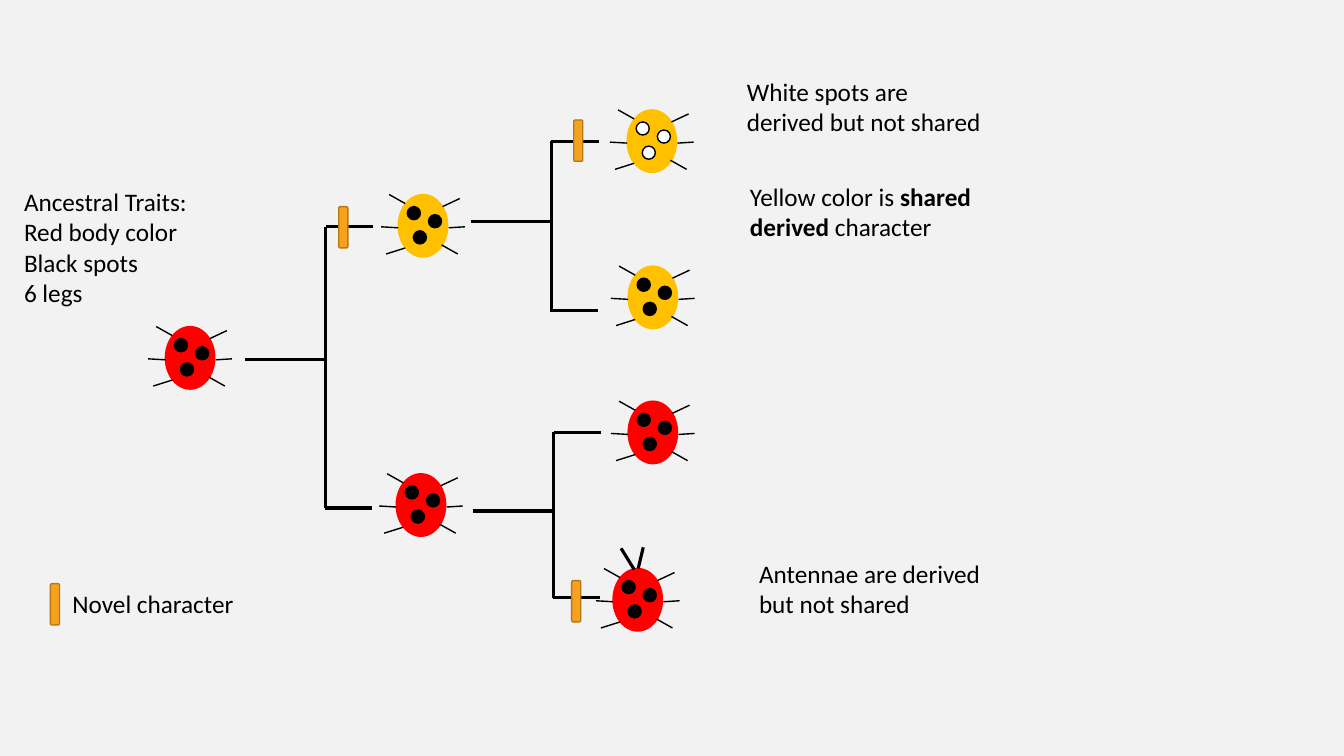
from typing import NamedTuple

from lxml import etree
from pptx import Presentation
from pptx.dml.color import RGBColor
from pptx.enum.shapes import MSO_CONNECTOR, MSO_SHAPE
from pptx.enum.text import MSO_AUTO_SIZE
from pptx.oxml.ns import qn
from pptx.shapes.autoshape import Shape
from pptx.shapes.shapetree import GroupShapes, SlideShapes
from pptx.util import Inches, Pt

OVAL = MSO_SHAPE.OVAL
ROUNDED = MSO_SHAPE.ROUNDED_RECTANGLE
STRAIGHT = MSO_CONNECTOR.STRAIGHT
GROW = MSO_AUTO_SIZE.SHAPE_TO_FIT_TEXT

COLORS = {
    "background": "F2F2F2",
    "black": "000000",
    "white": "FFFFFF",
    "red": "FF0000",
    "yellow": "FFC000",
    "marker": "F6A21D",
    "marker_edge": "B67815",
}
FONT = {"name": "Calibri", "size": Pt(18)}
FRAME = {"word_wrap": True, "auto_size": GROW}
THIN, THICK = 1, 2.25

Point = tuple[float, float]
Canvas = SlideShapes | GroupShapes


class Segment(NamedTuple):
    start: Point
    end: Point


class Beetle(NamedTuple):
    left: float
    top: float
    body: str
    spots: str = "black"


class Fork(NamedTuple):
    """A stem from the left that splits into an upper and a lower arm."""
    stem_left: float
    stem_y: float
    split_x: float
    upper_y: float
    lower_y: float


class Span(NamedTuple):
    text: str
    bold: bool = False


class Note(NamedTuple):
    left: float
    top: float
    width: float
    height: float
    paras: list[list[Span]]


BODY_WIDTH, BODY_HEIGHT, SPOT_SIZE = 0.49, 0.62, 0.13
MARKER_WIDTH, MARKER_HEIGHT = 0.09, 0.41
ARM_LENGTH = 0.47

# Offsets from the top left corner of a beetle's body
SPOTS = [(0.09, 0.12), (0.3, 0.2), (0.15, 0.36)]
LEGS = [
    Segment((0.07, 0.09), (-0.09, 0)),
    Segment((0, 0.33), (-0.17, 0.32)),
    Segment((0.59, 0.59), (0.43, 0.5)),
    Segment((0.61, 0.04), (0.44, 0.12)),
    Segment((0.66, 0.32), (0.5, 0.33)),
    Segment((0.07, 0.53), (-0.12, 0.59)),
]

BEETLES = [
    Beetle(1.64, 3.24, "red"),
    Beetle(3.93, 4.7, "red"),
    Beetle(3.95, 1.93, "yellow"),
    Beetle(6.23, 2.64, "yellow"),
    Beetle(6.22, 1.09, "yellow", "white"),
    Beetle(6.08, 5.64, "red"),
    Beetle(6.23, 3.98, "red"),
]
ANTENNAE = [
    Segment((6.33, 5.64), (6.38, 5.43)),
    Segment((6.29, 5.65), (6.16, 5.44)),
]
FORKS = [
    Fork(2.43, 3.57, 3.23, 2.25, 5.04),
    Fork(4.67, 2.2, 5.47, 1.4, 3.08),
    Fork(4.69, 5.07, 5.49, 4.29, 5.93),
]
MARKERS = [(3.36, 2.05), (5.67, 5.76), (5.69, 1.19), (0.5, 5.79)]
NOTES = [
    Note(7.34, 1.75, 2.54, 0.71, [
        [Span("Yellow color is "), Span("shared derived", True), Span(" character")],
    ]),
    Note(7.43, 5.49, 2.54, 0.71, [[Span("Antennae are derived but not shared")]]),
    Note(0.14, 1.8, 1.93, 1.31, [
        [Span("Ancestral Traits:")],
        [Span("Red body color")],
        [Span("Black spots")],
        [Span("6 legs")],
    ]),
    Note(7.31, 0.71, 2.54, 0.71, [[Span("White spots are derived but not shared")]]),
    Note(0.62, 5.79, 2.33, 0.4, [[Span("Novel character")]]),
]


def color(name: str) -> RGBColor:
    return RGBColor.from_string(COLORS[name])


def set_all(target: object, values: dict) -> None:
    for name, value in values.items():
        setattr(target, name, value)


def draw_shape(canvas: Canvas, kind: MSO_SHAPE, corner: Point, size: Point,
               fill: str, edge: str) -> Shape:
    shape = canvas.add_shape(kind, *map(Inches, corner + size))
    shape.shadow.inherit = False
    shape.fill.solid()
    shape.fill.fore_color.rgb = color(fill)
    shape.line.color.rgb = color(edge)
    shape.line.width = Pt(THIN)
    return shape


def draw_line(canvas: Canvas, segment: Segment, width: float) -> None:
    line = canvas.add_connector(STRAIGHT, *map(Inches, segment.start + segment.end))
    line.line.color.rgb = color("black")
    line.line.width = Pt(width)
    etree.SubElement(line._element.spPr, qn("a:effectLst"))


def draw_beetle(canvas: Canvas, beetle: Beetle) -> None:
    def place(offset: Point) -> Point:
        return beetle.left + offset[0], beetle.top + offset[1]

    parts = canvas.add_group_shape().shapes
    draw_shape(parts, OVAL, place((0, 0)), (BODY_WIDTH, BODY_HEIGHT),
               beetle.body, beetle.body)
    for spot in SPOTS:
        draw_shape(parts, OVAL, place(spot), (SPOT_SIZE, SPOT_SIZE),
                   beetle.spots, "black")
    for leg in LEGS:
        draw_line(parts, Segment(place(leg.start), place(leg.end)), THIN)


def draw_fork(canvas: Canvas, fork: Fork) -> None:
    parts = canvas.add_group_shape().shapes
    split = fork.split_x
    lower_left = split - 0.01
    for segment in (
        Segment((fork.stem_left, fork.stem_y), (split, fork.stem_y)),
        Segment((split, fork.upper_y), (split, fork.lower_y)),
        Segment((split, fork.upper_y), (split + ARM_LENGTH, fork.upper_y)),
        Segment((lower_left, fork.lower_y), (lower_left + ARM_LENGTH, fork.lower_y)),
    ):
        draw_line(parts, segment, THICK)


def draw_note(canvas: Canvas, note: Note) -> None:
    box = canvas.add_textbox(*map(Inches, note[:4]))
    frame = box.text_frame
    set_all(frame, FRAME)
    for index, spans in enumerate(note.paras):
        para = frame.add_paragraph() if index else frame.paragraphs[0]
        for span in spans:
            run = para.add_run()
            run.text = span.text
            set_all(run.font, FONT | {"bold": span.bold})
            run.font.color.rgb = color("black")


def main() -> None:
    deck = Presentation()
    set_all(deck, {"slide_width": Inches(13.33), "slide_height": Inches(7.5)})
    page = deck.slides.add_slide(deck.slide_layouts[6])
    page.background.fill.solid()
    page.background.fill.fore_color.rgb = color("background")

    for beetle in BEETLES:
        draw_beetle(page.shapes, beetle)
    for antenna in ANTENNAE:
        draw_line(page.shapes, antenna, THICK)
    for fork in FORKS:
        draw_fork(page.shapes, fork)
    for corner in MARKERS:
        draw_shape(page.shapes, ROUNDED, corner, (MARKER_WIDTH, MARKER_HEIGHT),
                   "marker", "marker_edge")
    for note in NOTES:
        draw_note(page.shapes, note)
    deck.save("out.pptx")


if __name__ == "__main__":
    main()
